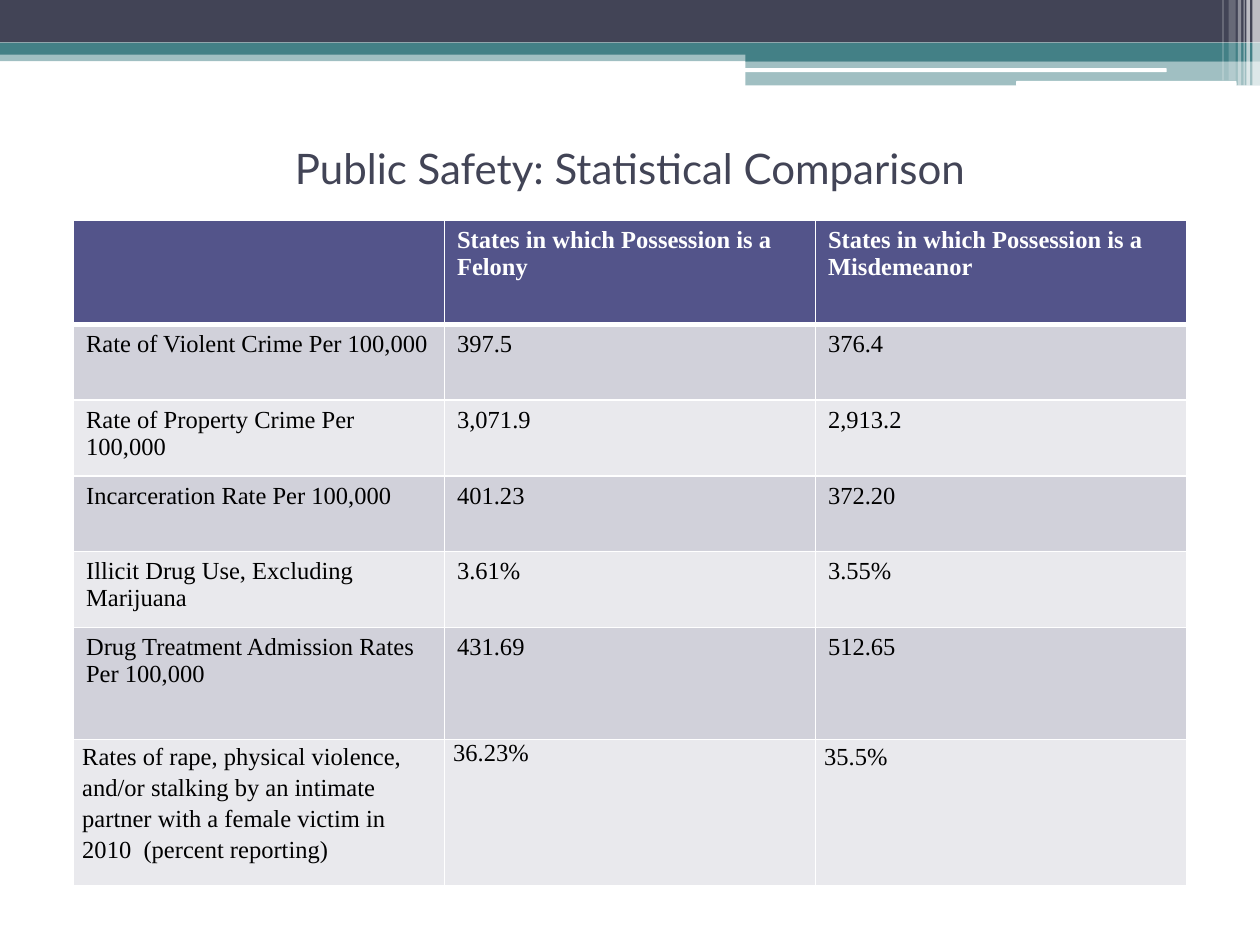
"""Build a slide comparing public safety figures by possession law."""
import pptx
import pptx.util
import pptx.dml.color
import pptx.enum.shapes
import pptx.enum.text
import pptx.oxml.ns
import lxml.etree

Pt = pptx.util.Pt
Color = pptx.dml.color.RGBColor
Kind = pptx.enum.shapes.MSO_SHAPE
qn = pptx.oxml.ns.qn

WHITE = Color(0xFF, 0xFF, 0xFF)
BLACK = Color(0, 0, 0)
SLATE = Color(0x42, 0x44, 0x56)
TEAL = Color(0x43, 0x80, 0x86)
INDIGO = Color(0x53, 0x54, 0x8A)
BANDS = (Color(0xE9, 0xE9, 0xED), Color(0xD1, 0xD1, 0xDA))

BARS = [
    (0, 28.8, 720, 6.2, TEAL, 50),
    (0, 0, 720, 24.3, SLATE, 100),
    (0, 24.3, 720, 7, TEAL, 100),
    (426, 28, 294, 7.2, TEAL, 100),
    (426, 35, 294, 13.8, TEAL, 50),
]
PILLS = [(425.5, 39, 241.2, 2.2), (580.6, 46.3, 126, 2.9)]
STRIPES = [
    (715.6, 4.4, 49, 65), (712.2, 2, 49, 65), (710.6, 0.7, 49, 60),
    (707.3, 2, 49, 40), (702.1, 4, 46, 20), (698.5, 0.7, 46, 30),
]
ROWS = [
    ("", "States in which Possession is a Felony",
     "States in which Possession is a Misdemeanor"),
    ("Rate of Violent Crime Per 100,000", "397.5", "376.4"),
    ("Rate of Property Crime Per 100,000", "3,071.9", "2,913.2"),
    ("Incarceration Rate Per 100,000", "401.23", "372.20"),
    ("Illicit Drug Use, Excluding Marijuana", "3.61%", "3.55%"),
    ("Drug Treatment Admission Rates Per 100,000", "431.69", "512.65"),
    ("Rates of rape, physical violence, and/or stalking by an intimate "
     "partner with a female victim in 2010  (percent reporting)",
     "36.23%", "35.5%"),
]
HEIGHTS = (59.4, 43.3, 43.3, 43.3, 43.3, 64, 83.7)


class Deck:
    """Hold the style and the current slide."""

    def __init__(self):
        self.show = pptx.Presentation()
        self.show.slide_width, self.show.slide_height = Pt(720), Pt(540)
        self.slide = self.show.slides.add_slide(self.show.slide_layouts[6])
        self.head, self.body = "Lato", "Times New Roman"

    def bar(self, x, y, w, h, color, alpha=100, kind=Kind.RECTANGLE):
        """Add a plain filled shape."""
        shape = self.slide.shapes.add_shape(kind, Pt(x), Pt(y), Pt(w), Pt(h))
        shape.shadow.inherit = False
        shape.line.fill.background()
        shape.fill.solid()
        shape.fill.fore_color.rgb = color
        if alpha < 100:
            tint = shape.fill._xPr.find(".//" + qn("a:srgbClr"))
            lxml.etree.SubElement(tint, qn("a:alpha"), val=str(alpha * 1000))

    def style(self, para, font, size, color, bold=False):
        """Format every run of a paragraph."""
        for run in para.runs:
            run.font.name, run.font.size = font, Pt(size)
            run.font.color.rgb, run.font.bold = color, bold

    def title(self, text, x, y, w, h):
        """Add the centred heading."""
        frame = self.slide.shapes.add_textbox(
            Pt(x), Pt(y), Pt(w), Pt(h)).text_frame
        frame.word_wrap = True
        frame.vertical_anchor = pptx.enum.text.MSO_ANCHOR.MIDDLE
        frame.text = text
        para = frame.paragraphs[0]
        para.alignment = pptx.enum.text.PP_ALIGN.CENTER
        self.style(para, self.head, 24, SLATE)

    def edge(self, cell, side, width):
        """Draw one white cell border."""
        line = lxml.etree.SubElement(
            cell._tc.get_or_add_tcPr(), qn("a:ln" + side), w=str(Pt(width)))
        fill = lxml.etree.SubElement(line, qn("a:solidFill"))
        lxml.etree.SubElement(fill, qn("a:srgbClr"), val=str(WHITE))

    def cell(self, cell, text, row):
        """Fill and format one cell."""
        first = row == 0
        for side in "LRTB":
            thick = (row, side) in ((0, "B"), (1, "T"))
            self.edge(cell, side, 3 if thick else 1)
        cell.fill.solid()
        cell.fill.fore_color.rgb = INDIGO if first else BANDS[row % 2]
        cell.text_frame.text = text
        self.style(cell.text_frame.paragraphs[0], self.body, 14,
                   WHITE if first else BLACK, first)

    def table(self, rows, heights, x, y, w):
        """Add the table, with a tighter inset in its last row."""
        cols, last = len(rows[0]), len(rows) - 1
        grid = self.slide.shapes.add_table(
            len(rows), cols, Pt(x), Pt(y), Pt(w), Pt(sum(heights))).table
        for col in grid.columns:
            col.width = Pt(w / cols)
        for r, (texts, high) in enumerate(zip(rows, heights)):
            grid.rows[r].height = Pt(high)
            for c, text in enumerate(texts):
                self.cell(grid.cell(r, c), text, r)
        for c in range(cols):
            cell = grid.cell(last, c)
            cell.margin_left = cell.margin_right = Pt(5)
            cell.margin_top = cell.margin_bottom = 0
            if c != 1:
                cell.text_frame.paragraphs[0].line_spacing = 1.15


def main():
    """Lay out the slide and save it."""
    deck = Deck()
    for bar in BARS:
        deck.bar(*bar)
    for pill in PILLS:
        deck.bar(*pill, WHITE, kind=Kind.ROUNDED_RECTANGLE)
    for x, w, h, alpha in STRIPES:
        deck.bar(x, 0, w, h, WHITE, alpha)
    deck.title("Public Safety: Statistical Comparison", 36, 54, 648, 84)
    deck.table(ROWS, HEIGHTS, 42, 126, 636)
    deck.show.save("out.pptx")


if __name__ == "__main__":
    main()
